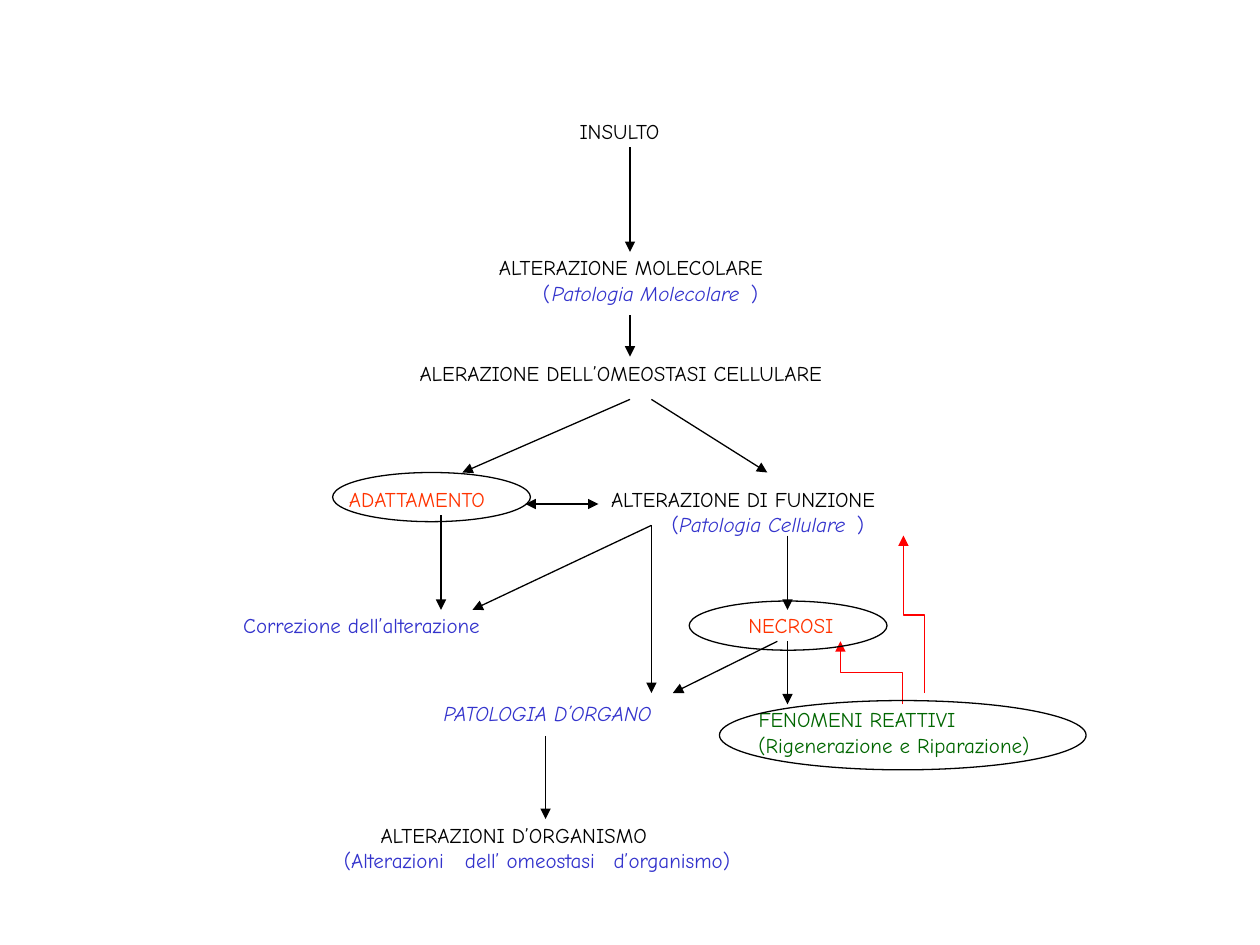
from pptx import Presentation
from pptx.dml.color import RGBColor as Rgb
from pptx.enum.shapes import MSO_CONNECTOR as Conn, MSO_SHAPE as Form
from pptx.enum.text import MSO_AUTO_SIZE as Fit
from pptx.oxml.ns import qn
from pptx.util import Pt
from lxml.etree import SubElement as sub

SCALE = 9144
BLACK, BLUE, RED, ORANGE, GREEN = "000000", "3333CC", "FF0000", "FF3300", "006600"
FRAME = {"margin_left": 0, "margin_right": 0, "margin_top": 0,
         "margin_bottom": 0, "word_wrap": False, "auto_size": Fit.SHAPE_TO_FIT_TEXT}
FONT = {"name": "Comic Neue", "size": Pt(12)}

TEXTS = [
    (460, 94, 87, "INSULTO", BLACK, False),
    (396, 202, 249, "ALTERAZIONE MOLECOLARE", BLACK, False),
    (431, 223, 14, "(", BLUE, False),
    (438, 223, 166, "Patologia Molecolare", BLUE, True),
    (596, 223, 14, ")", BLUE, False),
    (333, 286, 373, "ALERAZIONE DELL’OMEOSTASI CELLULARE", BLACK, False),
    (277, 386, 134, "ADATTAMENTO", ORANGE, False),
    (485, 386, 255, "ALTERAZIONE DI FUNZIONE", BLACK, False),
    (533, 406, 14, "(", BLUE, False),
    (539, 406, 149, "Patologia Cellulare", BLUE, True),
    (680, 406, 14, ")", BLUE, False),
    (193, 486, 215, "Correzione dell’alterazione", BLUE, False),
    (594, 486, 78, "NECROSI", ORANGE, False),
    (352, 556, 202, "PATOLOGIA D’ORGANO", BLUE, True),
    (602, 561, 192, "FENOMENI REATTIVI", GREEN, False),
    (602, 581, 236, "(Rigenerazione e Riparazione)", GREEN, False),
    (302, 653, 259, "ALTERAZIONI D’ORGANISMO", BLACK, False),
    (273, 673, 105, "(Alterazioni", BLUE, False),
    (369, 673, 118, "dell’ omeostasi", BLUE, False),
    (487, 673, 103, "d’organismo)", BLUE, False),
]
ARROWS = [
    (500, 117, 500, 200), (500, 250, 500, 283),
    (500, 317, 367, 375), (517, 317, 609, 375),
    (350, 409, 350, 484), (517, 417, 375, 484),
    (517, 417, 517, 550), (617, 509, 534, 550),
    (625, 425, 625, 484), (625, 509, 625, 559),
    (433, 584, 433, 650),
]
PATHS = [
    [(716, 559), (716, 534), (667, 534), (667, 509)],
    [(734, 550), (734, 488), (717, 488), (717, 425)],
]
RINGS = [(264, 375, 157, 39), (547, 477, 157, 39), (571, 556, 291, 55)]


def px(*nums):
    """Turn px lengths into EMU."""
    return [n * SCALE for n in nums]


def tint(code):
    """Make a colour from a hex string."""
    return Rgb.from_string(code)


def apply(obj, vals):
    """Set each named value on an object."""
    for key, val in vals.items():
        setattr(obj, key, val)


def label(slide, left, top, wide, words, hue, slant):
    """Place one line of text."""
    frame = slide.shapes.add_textbox(*px(left, top, wide, 28)).text_frame
    apply(frame, FRAME)
    run = frame.paragraphs[0].add_run()
    run.text = words
    apply(run.font, FONT | {"italic": slant})
    run.font.color.rgb = tint(hue)


def stroke(shape, hue, ends=()):
    """Draw a thin line with the given arrowheads."""
    shape.line.width = Pt(0.75)
    shape.line.color.rgb = tint(hue)
    pen = shape.line._get_or_add_ln()
    for end in ends:
        sub(pen, qn(f"a:{end}"), type="triangle", w="med", len="med")


def arrow(slide, ends, heads=("tailEnd",)):
    """Join two points with a straight arrow."""
    link = slide.shapes.add_connector(Conn.STRAIGHT, *px(*ends))
    stroke(link, BLACK, heads)
    sub(link._element.spPr, qn("a:effectLst"))


def bend(slide, dots):
    """Trace a red path of right angles with an arrowhead."""
    pen = slide.shapes.build_freeform(*dots[0], scale=SCALE)
    pen.add_line_segments(dots[1:], close=False)
    shape = pen.convert_to_shape()
    shape.fill.background()
    stroke(shape, RED, ["tailEnd"])
    shape.shadow.inherit = False


def ring(slide, box):
    """Draw an empty ellipse."""
    shape = slide.shapes.add_shape(Form.OVAL, *px(*box))
    shape.fill.background()
    stroke(shape, BLACK)
    shape.shadow.inherit = False


def main():
    """Build the slide and save it."""
    deck = Presentation()
    deck.slide_width, deck.slide_height = px(1000, 750)
    slide = deck.slides.add_slide(deck.slide_layouts[6])
    for text in TEXTS:
        label(slide, *text)
    for ends in ARROWS:
        arrow(slide, ends)
    arrow(slide, (417, 400, 475, 400), ("headEnd", "tailEnd"))
    for dots in PATHS:
        bend(slide, dots)
    for box in RINGS:
        ring(slide, box)
    deck.save("out.pptx")


if __name__ == "__main__":
    main()
